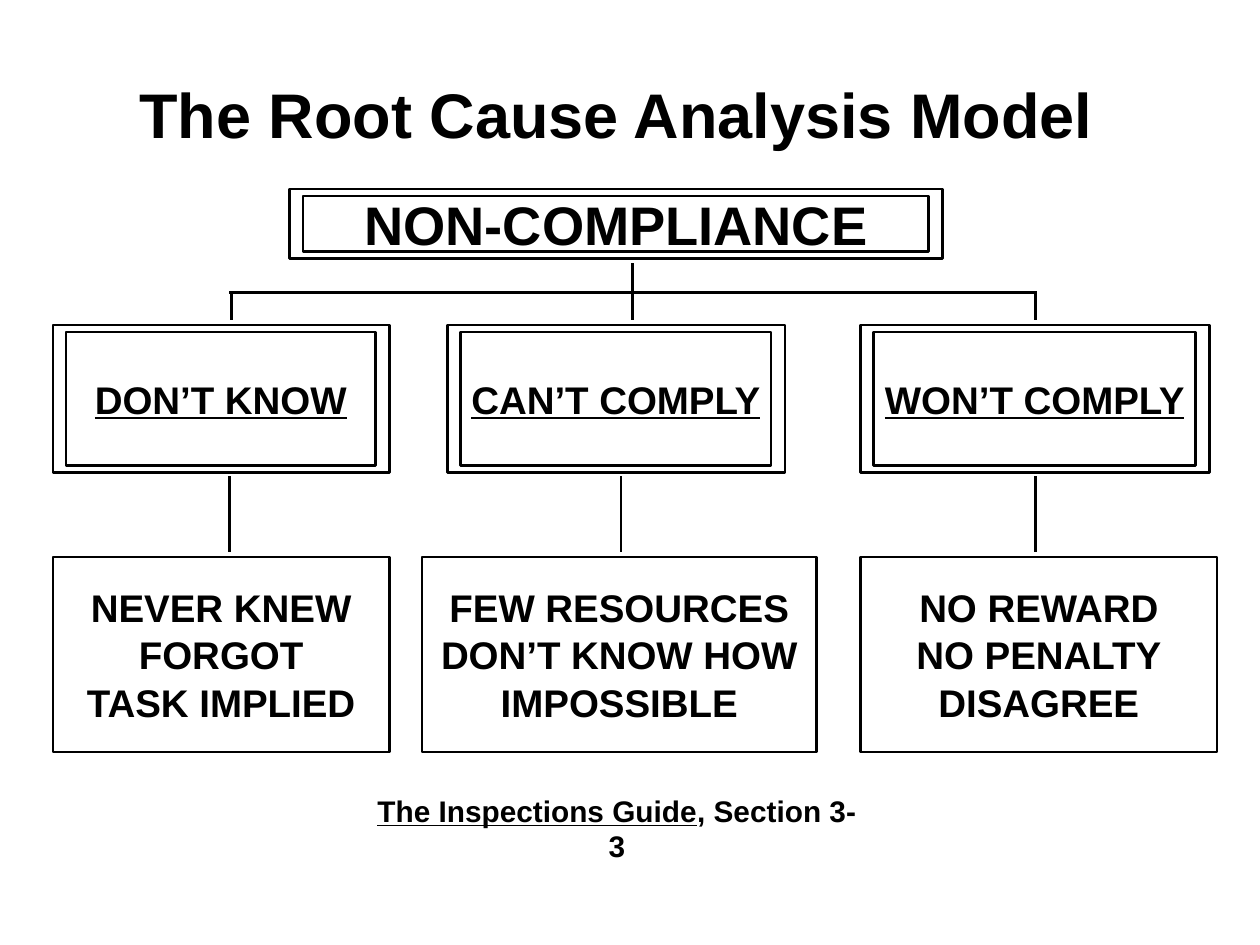
from dataclasses import dataclass

from lxml.etree import SubElement
from pptx import Presentation
from pptx.dml.color import RGBColor as Rgb
from pptx.enum.shapes import MSO_CONNECTOR as Link, MSO_SHAPE as Form
from pptx.enum.text import MSO_ANCHOR as Anchor, MSO_AUTO_SIZE as Fit, PP_ALIGN as Align
from pptx.oxml.ns import qn
from pptx.util import Inches, Pt


@dataclass(frozen=True)
class Theme:
    """Colours, font and type sizes of the slide."""
    ink: Rgb = Rgb(0, 0, 0)
    paper: Rgb = Rgb(255, 255, 255)
    font: str = "Arial"
    title: int = 36
    head: int = 31
    body: int = 22
    note: int = 17
    rule: float = 1.5


class Chart:
    """Draws on one slide, in a grid of 100 columns by 75 rows."""

    def __init__(self, deck, theme):
        """Add a title-only slide and find the grid's cell."""
        self.theme = theme
        self.slide = deck.slides.add_slide(deck.slide_layouts[5])
        self.shapes = self.slide.shapes
        self.cell = deck.slide_width / 100

    def grid(self, *cells):
        """Turn grid counts into lengths."""
        return [round(n * self.cell) for n in cells]

    def stroke(self, line):
        """Style an outline or a rule."""
        line.color.rgb = self.theme.ink
        line.width = Pt(self.theme.rule)

    def label(self, frame, lines, size, gap=0):
        """Fill a frame with lines, each a list of (text, underline) runs."""
        for i, runs in enumerate(lines):
            para = frame.paragraphs[0] if i == 0 else frame.add_paragraph()
            para.alignment = Align.CENTER
            para.space_before = Pt(gap)
            for text, under in runs:
                run = para.add_run()
                run.text = text
                font = run.font
                font.name, font.size, font.bold = self.theme.font, Pt(size), True
                font.underline = under
                font.color.rgb = self.theme.ink

    def title(self, text, *area):
        """Place and fill the title."""
        shape = self.shapes.title
        shape.left, shape.top, shape.width, shape.height = self.grid(*area)
        frame = shape.text_frame
        frame.auto_size = Fit.NONE
        frame.vertical_anchor = Anchor.TOP
        frame.margin_top = Inches(0.1)
        self.label(frame, [[(text, False)]], self.theme.title)

    def note(self, runs, *area):
        """Add a wrapped line of text."""
        frame = self.shapes.add_textbox(*self.grid(*area)).text_frame
        frame.word_wrap = True
        frame.margin_left = frame.margin_right = Inches(0.08)
        frame.margin_top = frame.margin_bottom = Inches(0.04)
        self.label(frame, [runs], self.theme.note)

    def box(self, area, lines=(), size=0, under=False):
        """Add an outlined box with centred lines."""
        shape = self.shapes.add_shape(Form.RECTANGLE, *self.grid(*area))
        shape.shadow.inherit = False
        shape.fill.solid()
        shape.fill.fore_color.rgb = self.theme.paper
        self.stroke(shape.line)
        frame = shape.text_frame
        frame.word_wrap = False
        frame.vertical_anchor = Anchor.MIDDLE
        gap = 1 if len(lines) > 1 else 0
        self.label(frame, [[(text, under)] for text in lines], size, gap)

    def frame(self, area, text, size, under=False):
        """Add a double-framed box."""
        x, y, w, h = area
        self.box(area)
        self.box((x + 1.05, y + 0.55, w - 2.15, h - 1.1), [text], size, under)

    def line(self, *ends):
        """Add a straight rule."""
        link = self.shapes.add_connector(Link.STRAIGHT, *self.grid(*ends))
        self.stroke(link.line)
        SubElement(link._element.spPr, qn("a:effectLst"))


def main():
    """Build the slide."""
    deck = Presentation()
    deck.slide_width, deck.slide_height = Inches(10), Inches(7.5)
    theme = Theme()
    chart = Chart(deck, theme)
    chart.title("The Root Cause Analysis Model ", 6.7, 5, 85.8, 9)
    chart.frame((23, 15, 51.8, 5.5), "NON-COMPLIANCE", theme.head)
    chart.line(18.2, 23.2, 82.3, 23.2)
    chart.line(50.2, 20.9, 50.2, 23.2)
    causes = [
        ("DON’T KNOW", 4.2, 26.7, 4.2, 26.7, 18.4, 18.2,
         ["NEVER KNEW", "FORGOT", "TASK IMPLIED"]),
        ("CAN’T COMPLY", 35.5, 26.8, 33.5, 31.3, 50.2, 49.3,
         ["FEW RESOURCES", "DON’T KNOW HOW", "IMPOSSIBLE"]),
        ("WON’T COMPLY", 68.3, 27.7, 68.3, 28.3, 82.2, 82.2,
         ["NO REWARD", "NO PENALTY", "DISAGREE"]),
    ]
    for name, x, w, left, wide, drop, stem, facts in causes:
        chart.line(drop, 23.2, drop, 25.4)
        chart.frame((x, 25.8, w, 11.7), name, theme.body, True)
        chart.line(stem, 37.8, stem, 43.8)
        chart.box((left, 44.2, wide, 15.5), facts, theme.body)
    chart.note([("The Inspections Guide", True), (", Section 3-3", False)],
               28.5, 62.5, 40.9, 3.6)
    deck.save("out.pptx")


if __name__ == "__main__":
    main()
